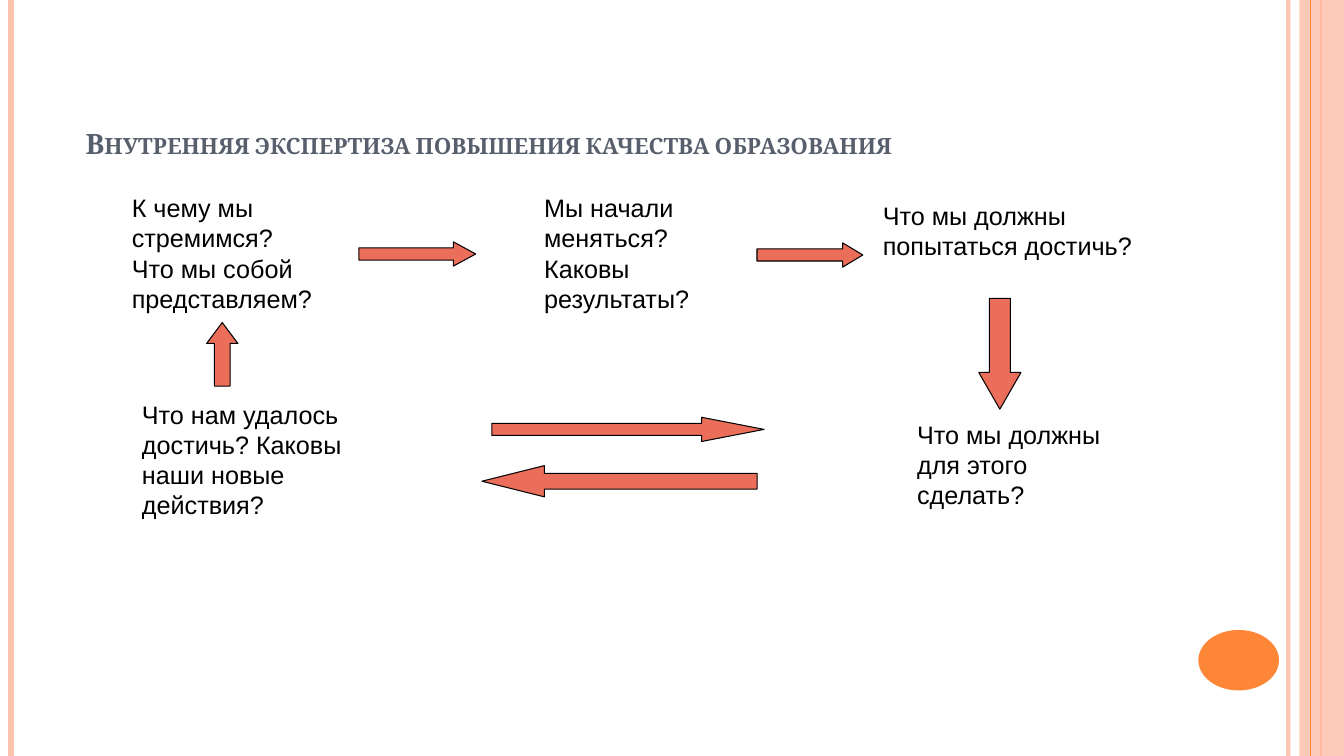
"""Build a slide showing the cycle of internal review of education quality."""
from dataclasses import dataclass
from typing import Any

import lxml.etree
import pptx
import pptx.dml.color
import pptx.enum.shapes
import pptx.enum.text
import pptx.oxml.ns
import pptx.util

Pt = pptx.util.Pt
RGBColor = pptx.dml.color.RGBColor
Shapes = pptx.enum.shapes.MSO_SHAPE
qn = pptx.oxml.ns.qn

WIDTH, HEIGHT = 960, 540
PEACH = RGBColor(0xFE, 0xC3, 0xAE)
ORANGE = RGBColor(0xFE, 0x86, 0x37)
CORAL = RGBColor(0xEB, 0x6E, 0x5A)
SLATE = RGBColor(0x57, 0x5F, 0x6D)
BLACK = RGBColor(0, 0, 0)

TITLE = "Внутренняя экспертиза повышения качества образования"
TITLE_FONT = {"name": "Cambria", "size": Pt(20), "bold": True}
QUESTION_FONT = {"name": "Arial", "size": Pt(18), "bold": False}


@dataclass(frozen=True)
class Box:
    left: float
    top: float
    width: float
    height: float

    def lengths(self) -> list[int]:
        return [Pt(value) for value in (self.left, self.top, self.width, self.height)]


@dataclass(frozen=True)
class Stripe:
    x: float
    color: RGBColor
    weight: float
    opacity: int = 100


@dataclass(frozen=True)
class Question:
    box: Box
    lines: tuple[str, ...]


@dataclass(frozen=True)
class Arrow:
    kind: Any
    box: Box
    head: float


LEFT_STRIPES = (
    Stripe(920.2, PEACH, 3, 93),
    Stripe(7.9, PEACH, 4.5),
    Stripe(943.9, ORANGE, 1.5),
)
BAND = Box(928.1, 0, 31.9, HEIGHT)
BAND_STRIPE = Stripe(936, ORANGE, 0.75)
DISC = Box(856, 450, 57.6, 43.2)
TITLE_BOX = Box(54, 54, 865.4, 64.1)

QUESTIONS = (
    Question(Box(87.1, 133.9, 196.6, 94.3), ("К чему мы стремимся?", "Что мы собой представляем?")),
    Question(Box(381.6, 133.9, 164.2, 94.3), ("Мы начали меняться?", "Каковы результаты?")),
    Question(Box(623.5, 139.7, 241.9, 51.1), ("Что мы должны попытаться достичь?",)),
    Question(Box(648, 295.9, 162, 72.7), ("Что мы должны для этого сделать?",)),
    Question(Box(94.3, 281.5, 188.6, 94.3), ("Что нам удалось достичь? Каковы наши новые действия?",)),
)
ARROWS = (
    Arrow(Shapes.RIGHT_ARROW, Box(256.3, 172.8, 83.5, 17.3), 0.92),
    Arrow(Shapes.RIGHT_ARROW, Box(540.7, 173.5, 75.6, 17.3), 0.83),
    Arrow(Shapes.DOWN_ARROW, Box(699.1, 213.1, 30.2, 79.2), 0.87),
    Arrow(Shapes.RIGHT_ARROW, Box(351.4, 298.1, 194.4, 17.3), 2.58),
    Arrow(Shapes.LEFT_ARROW, Box(344.2, 332.6, 196.6, 22.3), 2),
    Arrow(Shapes.UP_ARROW, Box(147.6, 230.4, 22.3, 45.4), 0.67),
)


def set_attributes(target: Any, values: dict[str, Any]) -> None:
    for name, value in values.items():
        setattr(target, name, value)


def set_opacity(shape: Any, percent: int) -> None:
    for color in shape._element.iter(qn("a:srgbClr")):
        lxml.etree.SubElement(color, qn("a:alpha"), val=str(percent * 1000))


def add_stripe(slide: Any, stripe: Stripe) -> None:
    x = Pt(stripe.x)
    connector = slide.shapes.add_connector(
        pptx.enum.shapes.MSO_CONNECTOR.STRAIGHT, x, 0, x, Pt(HEIGHT)
    )
    connector.line.color.rgb = stripe.color
    connector.line.width = Pt(stripe.weight)
    lxml.etree.SubElement(connector._element.spPr, qn("a:effectLst"))
    if stripe.opacity < 100:
        set_opacity(connector, stripe.opacity)


def add_filled_shape(slide: Any, kind: Any, box: Box, color: RGBColor) -> Any:
    shape = slide.shapes.add_shape(kind, *box.lengths())
    shape.shadow.inherit = False
    shape.fill.solid()
    shape.fill.fore_color.rgb = color
    shape.line.fill.background()
    return shape


def add_run(paragraph: Any, text: str, font: dict[str, Any], color: RGBColor) -> Any:
    paragraph.alignment = pptx.enum.text.PP_ALIGN.LEFT
    run = paragraph.add_run()
    run.text = text
    set_attributes(run.font, font)
    run.font.color.rgb = color
    return run


def fill_title(slide: Any) -> None:
    title = slide.shapes.title
    set_attributes(title, dict(zip(("left", "top", "width", "height"), TITLE_BOX.lengths())))
    set_attributes(title.text_frame, {
        "vertical_anchor": pptx.enum.text.MSO_ANCHOR.BOTTOM,
        "auto_size": pptx.enum.text.MSO_AUTO_SIZE.NONE,
        "word_wrap": True,
    })
    run = add_run(title.text_frame.paragraphs[0], TITLE, TITLE_FONT, SLATE)
    run.font._element.set("cap", "small")


def add_question(slide: Any, question: Question) -> None:
    frame = slide.shapes.add_textbox(*question.box.lengths()).text_frame
    set_attributes(frame, {
        "word_wrap": True,
        "auto_size": pptx.enum.text.MSO_AUTO_SIZE.SHAPE_TO_FIT_TEXT,
    })
    for index, line in enumerate(question.lines):
        paragraph = frame.add_paragraph() if index else frame.paragraphs[0]
        add_run(paragraph, line, QUESTION_FONT, BLACK)


def add_arrow(slide: Any, arrow: Arrow) -> None:
    shape = add_filled_shape(slide, arrow.kind, arrow.box, CORAL)
    shape.adjustments[0] = 0.5
    shape.adjustments[1] = arrow.head
    shape.line.color.rgb = BLACK
    shape.line.width = Pt(0.75)


def main() -> None:
    presentation = pptx.Presentation()
    set_attributes(presentation, {"slide_width": Pt(WIDTH), "slide_height": Pt(HEIGHT)})
    slide = presentation.slides.add_slide(presentation.slide_layouts.get_by_name("Title Only"))
    for stripe in LEFT_STRIPES:
        add_stripe(slide, stripe)
    set_opacity(add_filled_shape(slide, Shapes.RECTANGLE, BAND, PEACH), 87)
    add_stripe(slide, BAND_STRIPE)
    add_filled_shape(slide, Shapes.OVAL, DISC, ORANGE)
    fill_title(slide)
    for question in QUESTIONS:
        add_question(slide, question)
    for arrow in ARROWS:
        add_arrow(slide, arrow)
    presentation.save("out.pptx")


if __name__ == "__main__":
    main()
